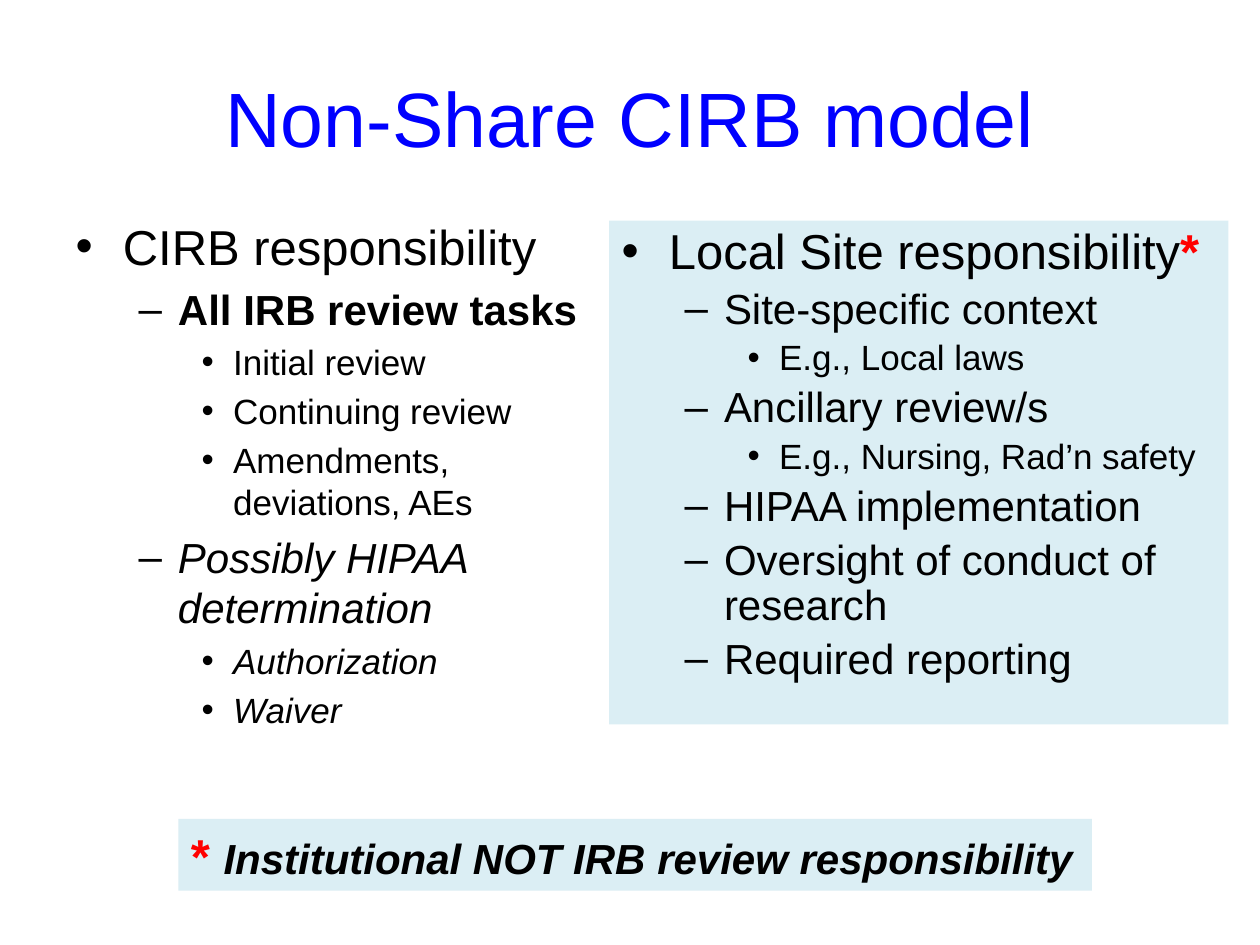
"""Build the Non-Share CIRB model slide."""
import pptx
import pptx.dml.color
import pptx.enum.text
import pptx.util

Pt = pptx.util.Pt
PALE, RED, BLUE, BLACK = "DBEEF4", "FF0000", "0000FF", "000000"
SIZES = (28, 24, 20)
INDENTS = ((27, -27), (58.5, -22.5), (90, -18))

CIRB = [
    (0, "CIRB responsibility", {}),
    (1, "All IRB review tasks", {"bold": True}),
    (2, "Initial review", {}),
    (2, "Continuing review", {}),
    (2, "Amendments, deviations, AEs", {}),
    (1, "Possibly HIPAA determination", {"italic": True}),
    (2, "Authorization", {"italic": True}),
    (2, "Waiver", {"italic": True}),
]
LOCAL = [
    (0, "Local Site responsibility", {}),
    (1, "Site-specific context", {}),
    (2, "E.g., Local laws", {}),
    (1, "Ancillary review/s", {}),
    (2, "E.g., Nursing, Rad’n safety", {}),
    (1, "HIPAA implementation", {}),
    (1, "Oversight of conduct of research", {}),
    (1, "Required reporting", {}),
]


def rgb(value):
    """Return the colour for a hex string."""
    return pptx.dml.color.RGBColor.from_string(value)


def add_run(p, text, size=24, color=BLACK, bold=False, italic=False):
    """Append formatted text to a paragraph."""
    r = p.add_run()
    r.text = text
    r.font.name = "Arial"
    r.font.size = Pt(size)
    r.font.bold = bold
    r.font.italic = italic
    r.font.color.rgb = rgb(color)


def place(sp, left, top, width, height, fill=None):
    """Position a shape, fill it if asked, and return its text frame."""
    sp.left, sp.top, sp.width, sp.height = map(Pt, (left, top, width, height))
    if fill:
        sp.fill.solid()
        sp.fill.fore_color.rgb = rgb(fill)
    tf = sp.text_frame
    tf.word_wrap = True
    tf.auto_size = pptx.enum.text.MSO_AUTO_SIZE.NONE
    return tf


def fill_list(tf, items, spacing=None):
    """Write a multilevel bullet list."""
    for i, (level, text, style) in enumerate(items):
        p = tf.add_paragraph() if i else tf.paragraphs[0]
        p.level = level
        p.line_spacing = spacing
        margin, indent = INDENTS[level]
        pPr = p._p.get_or_add_pPr()
        pPr.set("marL", str(Pt(margin)))
        pPr.set("indent", str(Pt(indent)))
        add_run(p, text, size=SIZES[level], **style)


def add_title(s, text):
    """Write the centred slide title."""
    tf = place(s.shapes.title, 36, 21.6, 648, 90)
    tf.vertical_anchor = pptx.enum.text.MSO_ANCHOR.MIDDLE
    p = tf.paragraphs[0]
    p.alignment = pptx.enum.text.PP_ALIGN.CENTER
    add_run(p, text, size=44, color=BLUE)


def add_footnote(s):
    """Add the shaded note that explains the asterisk."""
    sp = s.shapes.add_textbox(0, 0, 0, 0)
    p = place(sp, 102, 468, 522, 41, fill=PALE).paragraphs[0]
    p.space_before = Pt(2)
    add_run(p, "* ", size=28, color=RED, bold=True)
    add_run(p, "Institutional NOT IRB review responsibility", bold=True, italic=True)


def main():
    """Build and save the slide."""
    prs = pptx.Presentation()
    prs.slide_width, prs.slide_height = Pt(720), Pt(540)
    s = prs.slides.add_slide(prs.slide_layouts[3])
    add_title(s, "Non-Share CIRB model")
    fill_list(place(s.placeholders[1], 36, 120, 318, 356.4), CIRB)
    tf = place(s.placeholders[2], 348, 126, 354, 288, fill=PALE)
    fill_list(tf, LOCAL, spacing=0.9)
    add_run(tf.paragraphs[0], "*", size=28, color=RED, bold=True)
    add_footnote(s)
    prs.save("out.pptx")


if __name__ == "__main__":
    main()
